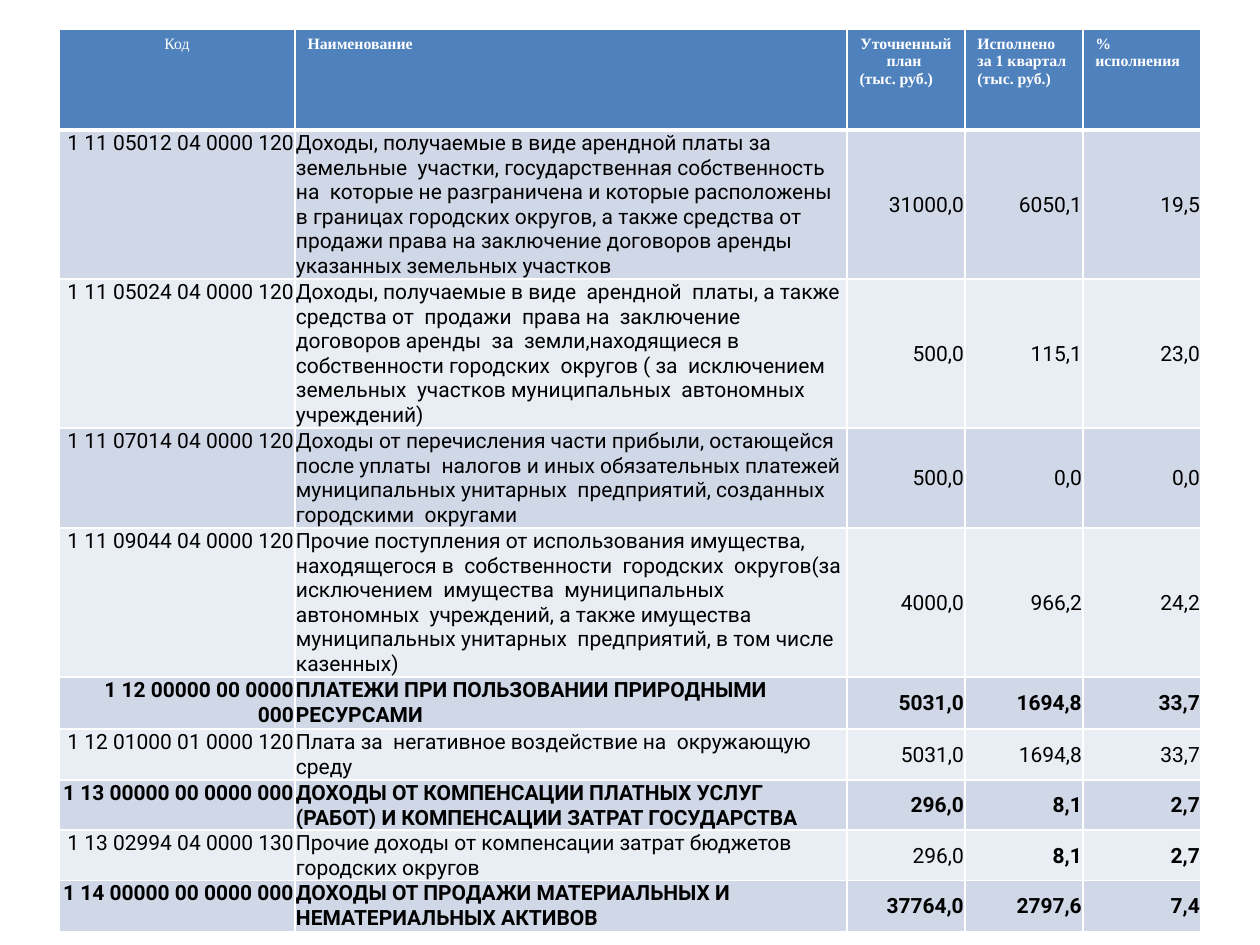
import pptx
import pptx.util
from pptx.dml.color import RGBColor
from pptx.enum.text import MSO_ANCHOR, PP_ALIGN
from pptx.oxml import parse_xml
from pptx.oxml.ns import nsdecls

PX = 914400 / 126  # EMU in one px
WHITE = RGBColor(0xFF, 0xFF, 0xFF)
BLACK = RGBColor(0, 0, 0)
BLUE = RGBColor(0x4F, 0x81, 0xBD)
BAND_DARK = RGBColor(0xD0, 0xD8, 0xE8)
BAND_LIGHT = RGBColor(0xE9, 0xED, 0xF4)
LEFT, CENTER, RIGHT = PP_ALIGN.LEFT, PP_ALIGN.CENTER, PP_ALIGN.RIGHT

COL_WIDTHS = [236, 552, 118, 118, 118]
ROW_HEIGHTS = [101, 149, 149, 100, 149, 52, 51, 50, 50, 51]

# Header cells: paragraphs as (text, alignment)
HEADER = [
    [("Код", CENTER)],
    [("Наименование", LEFT)],
    [("Уточненный план ", CENTER), ("(тыс. руб.)", LEFT)],
    [("Исполнено за 1 квартал (тыс. руб.)", LEFT)],
    [("% исполнения", LEFT)],
]

# Budget rows: code, name, plan, actual, percent, number of the first bold column
NO_BOLD = len(COL_WIDTHS)
INCOME = [
    ("1 11 05012 04 0000 120",
     "Доходы, получаемые в виде арендной платы за земельные  участки, "
     "государственная собственность на  которые не разграничена и которые "
     "расположены  в границах городских округов, а также средства от продажи "
     "права на заключение договоров аренды указанных земельных участков",
     "31000,0", "6050,1", "19,5", NO_BOLD),
    ("1 11 05024 04 0000 120",
     "Доходы, получаемые в виде  арендной  платы, а также  средства от  продажи  "
     "права на  заключение договоров аренды  за  земли,находящиеся в "
     "собственности городских  округов ( за  исключением земельных  участков "
     "муниципальных  автономных учреждений)",
     "500,0", "115,1", "23,0", NO_BOLD),
    ("1 11 07014 04 0000 120",
     "Доходы от перечисления части прибыли, остающейся после уплаты  налогов и "
     "иных обязательных платежей муниципальных унитарных  предприятий, "
     "созданных   городскими  округами",
     "500,0", "0,0", "0,0", NO_BOLD),
    (" 1 11 09044 04 0000 120",
     "Прочие поступления от использования имущества, находящегося в  "
     "собственности  городских  округов(за исключением  имущества  "
     "муниципальных автономных  учреждений, а также имущества  муниципальных "
     "унитарных  предприятий, в том числе казенных)",
     "4000,0", "966,2", "24,2", NO_BOLD),
    (" 1 12 00000 00 0000 000", "ПЛАТЕЖИ ПРИ ПОЛЬЗОВАНИИ ПРИРОДНЫМИ РЕСУРСАМИ",
     "5031,0", "1694,8", "33,7", 0),
    (" 1 12 01000 01 0000 120",
     "Плата за  негативное воздействие на  окружающую среду",
     "5031,0", "1694,8", "33,7", NO_BOLD),
    ("1 13 00000 00 0000 000",
     "ДОХОДЫ ОТ КОМПЕНСАЦИИ ПЛАТНЫХ УСЛУГ (РАБОТ) И КОМПЕНСАЦИИ ЗАТРАТ ГОСУДАРСТВА",
     "296,0", "8,1", "2,7", 0),
    ("1 13 02994 04 0000 130",
     "Прочие доходы от компенсации затрат бюджетов городских округов",
     "296,0", "8,1", "2,7", 3),
    ("1 14 00000 00 0000 000",
     "ДОХОДЫ ОТ ПРОДАЖИ МАТЕРИАЛЬНЫХ И НЕМАТЕРИАЛЬНЫХ АКТИВОВ",
     "37764,0", "2797,6", "7,4", 0),
]


def px(n):
    return pptx.util.Emu(round(n * PX))


def write(p, text, *, size, font, color, bold=False, align=LEFT):
    p.alignment = align
    r = p.add_run()
    r.text = text
    r.font.size = pptx.util.Pt(size)
    r.font.name = font
    r.font.bold = bold
    r.font.color.rgb = color


def style_cell(cell, fill, borders):
    """Borders map a side (L, R, T, B) to a width in points."""
    tcPr = cell._tc.get_or_add_tcPr()
    for side, width in borders.items():
        tcPr.append(parse_xml(
            f'<a:ln{side} {nsdecls("a")} w="{pptx.util.Pt(width)}"><a:solidFill>'
            f'<a:srgbClr val="{WHITE}"/></a:solidFill></a:ln{side}>'))
    cell.fill.solid()
    cell.fill.fore_color.rgb = fill


def fill_header(table):
    for col, paragraphs in enumerate(HEADER):
        cell = table.cell(0, col)
        style_cell(cell, BLUE, {"L": 1, "R": 1, "T": 1, "B": 3})
        tf = cell.text_frame
        for i, (text, align) in enumerate(paragraphs):
            p = tf.add_paragraph() if i else tf.paragraphs[0]
            write(p, text, size=9, font="Times New Roman", color=WHITE,
                  bold=col > 0, align=align)


def fill_row(table, row, values, first_bold):
    borders = {"L": 1, "R": 1, "T": 3 if row == 1 else 1, "B": 1}
    for col, text in enumerate(values):
        cell = table.cell(row, col)
        style_cell(cell, BAND_DARK if row % 2 else BAND_LIGHT, borders)
        cell.margin_left = cell.margin_right = cell.margin_top = px(1)
        cell.margin_bottom = 0
        cell.vertical_anchor = MSO_ANCHOR.MIDDLE if col > 1 else MSO_ANCHOR.TOP
        write(cell.text_frame.paragraphs[0], text, size=12, font="Roboto",
              color=BLACK, bold=col >= first_bold,
              align=LEFT if col == 1 else RIGHT)


def add_income_table(s):
    table = s.shapes.add_table(
        len(ROW_HEIGHTS), len(COL_WIDTHS), px(59), px(29),
        px(sum(COL_WIDTHS)), px(sum(ROW_HEIGHTS))).table
    table.horz_banding = False
    for column, width in zip(table.columns, COL_WIDTHS):
        column.width = px(width)
    for row, height in zip(table.rows, ROW_HEIGHTS):
        row.height = px(height)
    fill_header(table)
    for row, (*values, first_bold) in enumerate(INCOME, start=1):
        fill_row(table, row, values, first_bold)


def main():
    prs = pptx.Presentation()
    prs.slide_width, prs.slide_height = px(1260), px(945)
    s = prs.slides.add_slide(prs.slide_layouts[6])
    add_income_table(s)
    prs.save("out.pptx")


if __name__ == "__main__":
    main()
